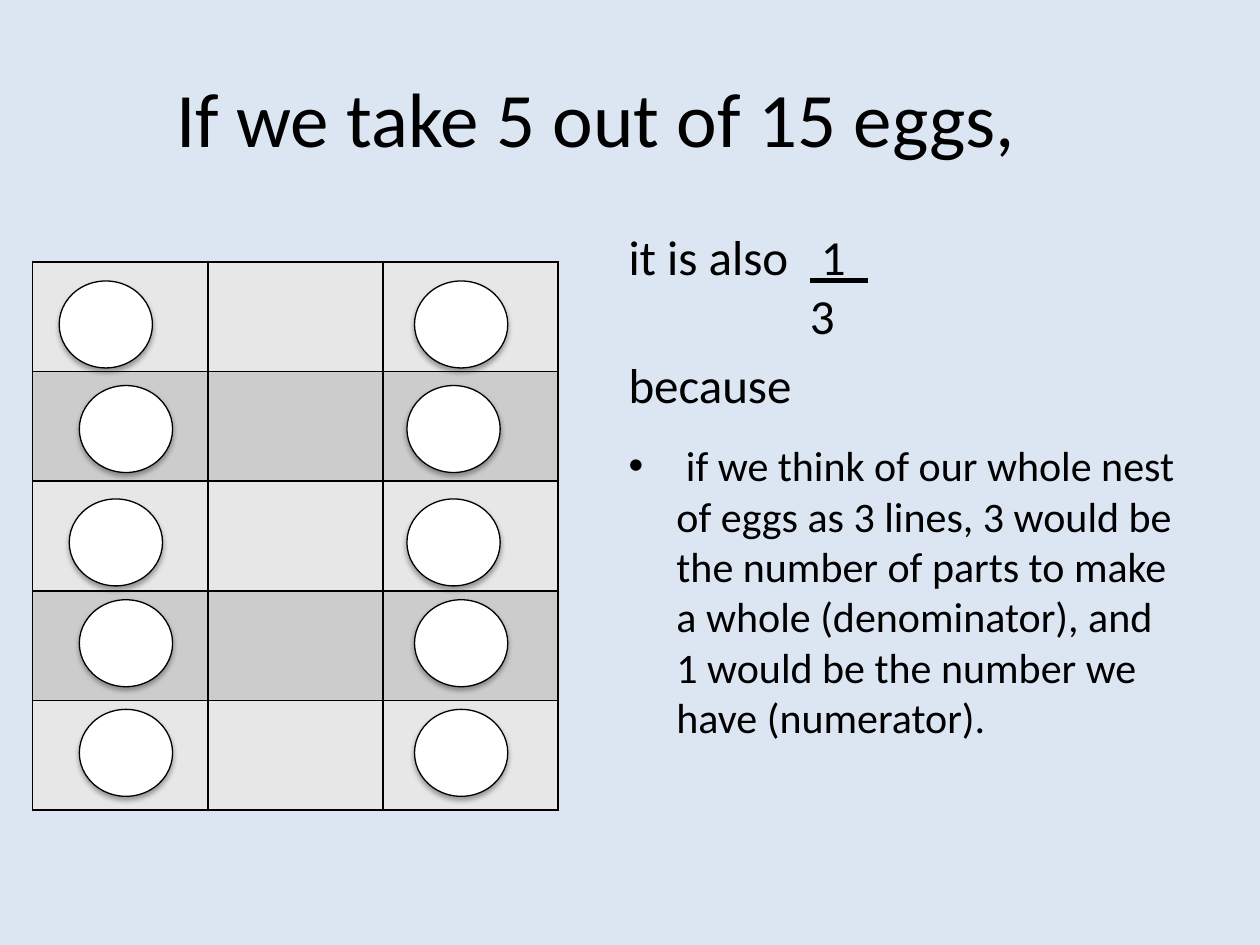
from lxml.etree import SubElement
from pptx import Presentation
from pptx.dml.color import RGBColor
from pptx.enum.shapes import MSO_SHAPE
from pptx.enum.text import MSO_ANCHOR, PP_ALIGN
from pptx.oxml import parse_xml
from pptx.oxml.ns import nsdecls, qn
from pptx.util import Inches, Pt

COLORS = {"sky": "DCE6F2", "ink": "000000", "egg": "FFFFFF", "light": "E7E7E7", "dark": "CCCCCC"}
FONT = "Calibri"

TITLE = "If we take 5 out of 15 eggs,"
CLAIM, NUMERATOR, DENOMINATOR = "it is also", " 1  ", "3"
LINK = "because"
REASON = (" if we think of our whole nest of eggs as 3 lines, 3 would be the number of parts "
          "to make a whole (denominator), and 1 would be the number we have (numerator).")

NEST_LEFT, NEST_TOP = 0.26, 2.08
COLUMNS, COLUMN_WIDTH, ROW_HEIGHT = 3, 1.39, 0.87
EGG_WIDTH, EGG_HEIGHT = 0.74, 0.69
# Each nest row: drop from the row's top, then {column: inset from the column's left}
NEST = [
    (0.15, {0: 0.21, 2: 0.25}),
    (0.11, {0: 0.37, 2: 0.19}),
    (0.14, {0: 0.29, 2: 0.19}),
    (0.07, {0: 0.37, 2: 0.25}),
    (0.07, {0: 0.37, 2: 0.25}),
]
FRACTION_TAB = 1.44
BULLET_INDENT = 0.38


def color(name):
    return RGBColor.from_string(COLORS[name])


def add_frame(slide, left, top, width, height):
    frame = slide.shapes.add_textbox(*map(Inches, (left, top, width, height))).text_frame
    frame.word_wrap = True
    return frame


def style(paragraph, size):
    paragraph.font.name = FONT
    paragraph.font.size = Pt(size)
    paragraph.font.color.rgb = color("ink")


def add_title(slide):
    frame = add_frame(slide, 0.3, 0.3, 9, 1.25)
    frame.vertical_anchor = MSO_ANCHOR.MIDDLE
    title = frame.paragraphs[0]
    title.text = TITLE + " "
    title.alignment = PP_ALIGN.CENTER
    style(title, 44)


def add_fraction(slide):
    frame = add_frame(slide, 4.89, 1.75, 4.26, 1.88)
    claim, link = frame.paragraphs[0], frame.add_paragraph()
    claim.add_run().text = CLAIM + "\t"
    numerator = claim.add_run()
    numerator.text = NUMERATOR
    numerator.font.underline = True
    claim.add_line_break()
    claim.add_run().text = "\t" + DENOMINATOR
    link.text = LINK
    for paragraph in (claim, link):
        paragraph.space_before = Pt(5.6)
        style(paragraph, 28)
    tabs = parse_xml(f'<a:tabLst {nsdecls("a")}><a:tab pos="{Inches(FRACTION_TAB)}" algn="l"/></a:tabLst>')
    claim._p.pPr.find(qn("a:spcBef")).addnext(tabs)


def add_reason(slide):
    reason = add_frame(slide, 4.89, 3.44, 4.59, 2.52).paragraphs[0]
    reason.text = REASON
    style(reason, 24)
    properties = reason._p.get_or_add_pPr()
    properties.set("marL", str(Inches(BULLET_INDENT)))
    properties.set("indent", str(-Inches(BULLET_INDENT)))
    properties.insert(0, parse_xml(f'<a:buChar {nsdecls("a")} char="•"/>'))
    properties.insert(0, parse_xml(f'<a:buFont {nsdecls("a")} typeface="Arial"/>'))


def add_borders(cell):
    properties = cell._tc.get_or_add_tcPr()
    for position, side in enumerate(("lnL", "lnR", "lnT", "lnB")):
        properties.insert(position, parse_xml(
            f'<a:{side} {nsdecls("a")} w="{Pt(1)}"><a:solidFill>'
            f'<a:srgbClr val="{COLORS["ink"]}"/></a:solidFill></a:{side}>'))


def add_nest(slide):
    nest = slide.shapes.add_table(
        len(NEST), COLUMNS, Inches(NEST_LEFT), Inches(NEST_TOP),
        Inches(COLUMNS * COLUMN_WIDTH), Inches(len(NEST) * ROW_HEIGHT)).table
    for column in nest.columns:
        column.width = Inches(COLUMN_WIDTH)
    for index, row in enumerate(nest.rows):
        row.height = Inches(ROW_HEIGHT)
        for cell in row.cells:
            cell.fill.solid()
            cell.fill.fore_color.rgb = color("dark" if index % 2 else "light")
            add_borders(cell)


def add_egg(slide, left, top):
    egg = slide.shapes.add_shape(
        MSO_SHAPE.OVAL, *map(Inches, (left, top, EGG_WIDTH, EGG_HEIGHT)))
    egg.fill.solid()
    egg.fill.fore_color.rgb = color("egg")
    egg.line.color.rgb = color("ink")
    egg.line.width = Pt(0.75)
    egg.shadow.inherit = False
    effects = egg._element.spPr.find(qn("a:effectLst"))
    shadow = SubElement(effects, qn("a:outerShdw"), blurRad=str(Pt(3.1)), dist=str(Pt(1.8)),
                        dir="5400000", rotWithShape="0")
    tint = SubElement(shadow, qn("a:srgbClr"), val=COLORS["ink"])
    SubElement(tint, qn("a:alpha"), val="35000")


def main():
    deck = Presentation()
    deck.slide_width, deck.slide_height = Inches(10), Inches(7.5)
    slide = deck.slides.add_slide(deck.slide_layouts[6])
    slide.background.fill.solid()
    slide.background.fill.fore_color.rgb = color("sky")
    add_title(slide)
    add_fraction(slide)
    add_nest(slide)
    for row, (drop, insets) in enumerate(NEST):
        for column, inset in insets.items():
            add_egg(slide, NEST_LEFT + column * COLUMN_WIDTH + inset,
                    NEST_TOP + row * ROW_HEIGHT + drop)
    add_reason(slide)
    deck.save("out.pptx")


if __name__ == "__main__":
    main()
